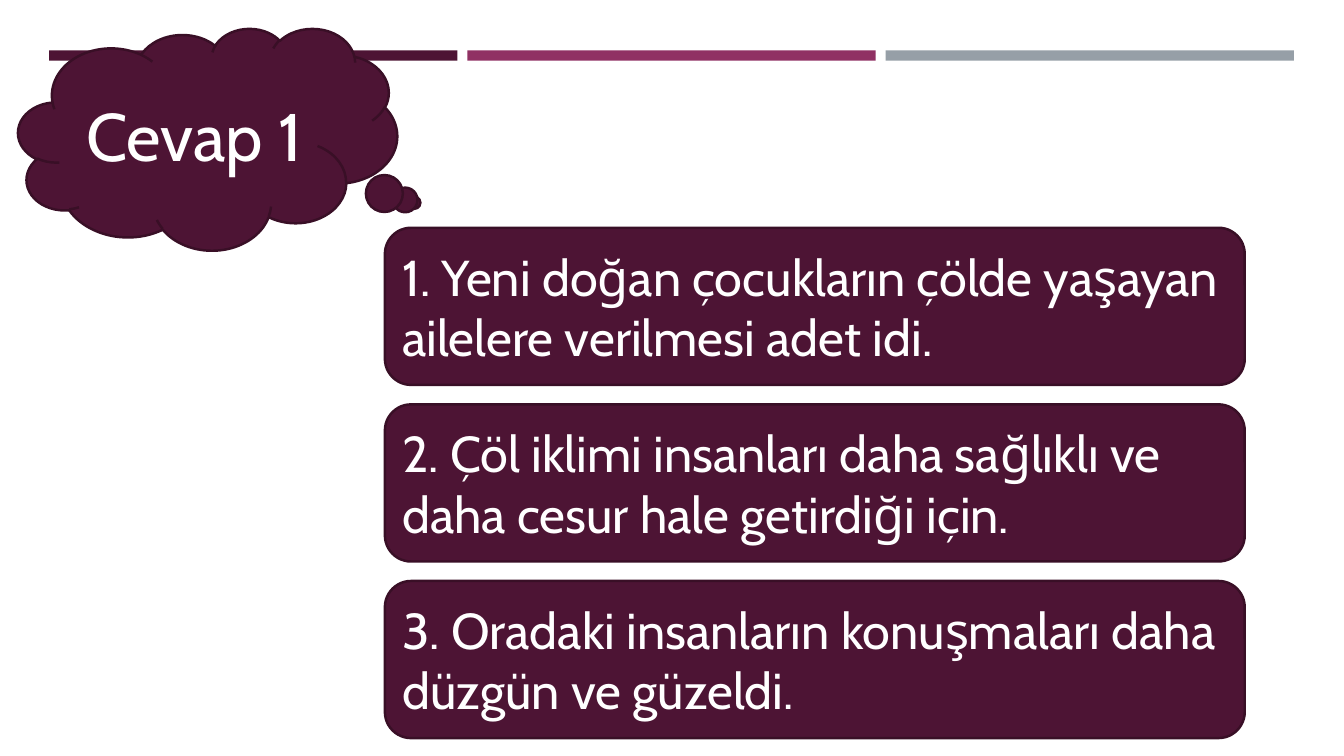
from dataclasses import dataclass

from pptx import Presentation
from pptx.dml.color import RGBColor
from pptx.enum.shapes import MSO_SHAPE
from pptx.enum.text import MSO_ANCHOR, MSO_AUTO_SIZE, PP_ALIGN
from pptx.shapes.autoshape import Shape
from pptx.slide import Slide
from pptx.util import Cm, Pt

RECT = MSO_SHAPE.RECTANGLE
ROUND = MSO_SHAPE.ROUNDED_RECTANGLE
CLOUD = MSO_SHAPE.CLOUD_CALLOUT
MIDDLE = MSO_ANCHOR.MIDDLE
NO_FIT = MSO_AUTO_SIZE.NONE
LEFT = PP_ALIGN.LEFT
CENTER = PP_ALIGN.CENTER

PLUM = RGBColor(0x4D, 0x14, 0x34)
EDGE = RGBColor(0x39, 0x0F, 0x26)
ROSE = RGBColor(0x90, 0x31, 0x63)
GRAY = RGBColor(0x96, 0x9F, 0xA7)
WHITE = RGBColor(0xFF, 0xFF, 0xFF)
FONT = "Cabin"

BARS = (PLUM, ROSE, GRAY)
CARDS = (
    "1. Yeni doğan çocukların çölde yaşayan ailelere verilmesi adet idi.",
    "2. Çöl iklimi insanları daha sağlıklı ve daha cesur hale getirdiği için.",
    "3. Oradaki insanların konuşmaları daha düzgün ve güzeldi.",
)


@dataclass(frozen=True)
class Box:
    left: float
    top: float
    width: float
    height: float

    def shift(self, right: float = 0, down: float = 0) -> "Box":
        return Box(self.left + right, self.top + down, self.width, self.height)

    def place(self) -> tuple[Cm, Cm, Cm, Cm]:
        return Cm(self.left), Cm(self.top), Cm(self.width), Cm(self.height)


BAR = Box(1.24, 1.27, 10.29, 0.26)
BAR_STEP = 10.54
CARD = Box(9.7, 5.74, 21.67, 3.96)
CARD_STEP = 4.45
CLOUD_BOX = Box(0.46, 0.71, 9.55, 5.59)
TITLE_BOX = Box(1.77, 1.56, 6.24, 3.64)


def draw(slide: Slide, kind: MSO_SHAPE, box: Box, fill: RGBColor,
         edge: RGBColor | None = None) -> Shape:
    shape = slide.shapes.add_shape(kind, *box.place())
    shape.shadow.inherit = False
    shape.fill.solid()
    shape.fill.fore_color.rgb = fill
    if edge is None:
        shape.line.fill.background()
    else:
        shape.line.color.rgb = edge
        shape.line.width = Pt(1.75)
    return shape


def write(shape: Shape, text: str, size: int, align: PP_ALIGN) -> None:
    frame = shape.text_frame
    frame.word_wrap = True
    frame.auto_size = NO_FIT
    frame.vertical_anchor = MIDDLE
    para = frame.paragraphs[0]
    para.alignment = align
    run = para.add_run()
    run.text = text
    run.font.name = FONT
    run.font.size = Pt(size)
    run.font.color.rgb = WHITE


def add_title(slide: Slide, text: str) -> None:
    cloud = draw(slide, CLOUD, CLOUD_BOX, PLUM, EDGE)
    cloud.adjustments[0] = 0.545
    cloud.adjustments[1] = 0.287
    title = slide.shapes.title
    title.left, title.top, title.width, title.height = TITLE_BOX.place()
    write(title, text, 48, CENTER)
    title.element.getparent().append(title.element)


def main() -> None:
    deck = Presentation()
    deck.slide_width = Cm(33.87)
    deck.slide_height = Cm(19.05)
    slide = deck.slides.add_slide(deck.slide_layouts.get_by_name("Title Only"))
    for i, fill in enumerate(BARS):
        draw(slide, RECT, BAR.shift(right=i * BAR_STEP), fill)
    for i, text in enumerate(CARDS):
        card = draw(slide, ROUND, CARD.shift(down=i * CARD_STEP), PLUM, EDGE)
        write(card, text, 36, LEFT)
    add_title(slide, "Cevap 1")
    deck.save("out.pptx")


if __name__ == "__main__":
    main()
